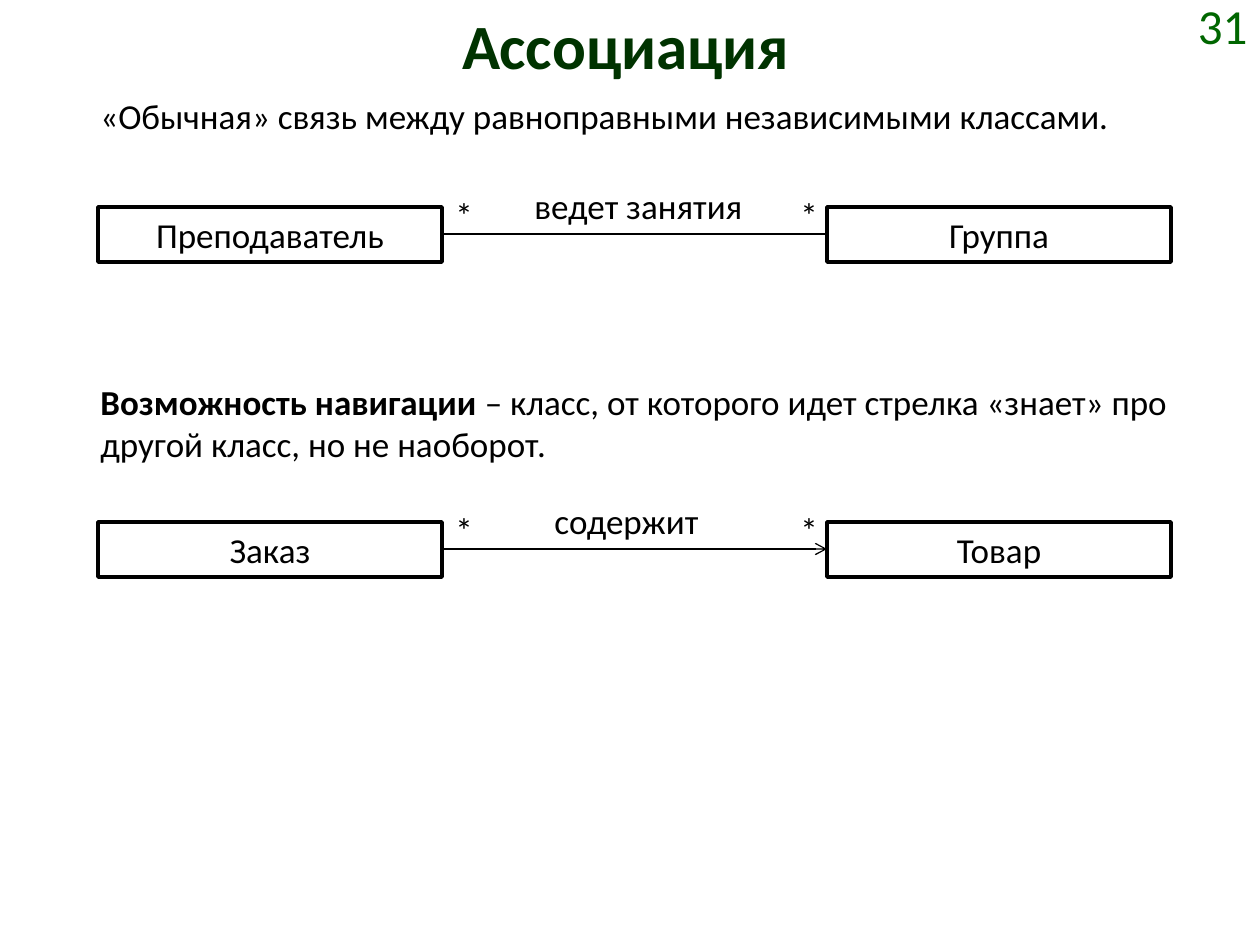
from dataclasses import dataclass
from lxml.etree import SubElement
from pptx import Presentation
from pptx.dml.color import RGBColor
from pptx.enum.shapes import MSO_CONNECTOR, MSO_SHAPE
from pptx.enum.text import MSO_ANCHOR, MSO_AUTO_SIZE, PP_ALIGN
from pptx.oxml.ns import qn
from pptx.util import Pt

SCALE = 914400 / 126


def emu(*vals):
    return [round(v * SCALE) for v in vals]


@dataclass(frozen=True)
class Theme:
    font: str = "Calibri"
    ink: RGBColor = RGBColor(0, 0, 0)
    paper: RGBColor = RGBColor(255, 255, 255)
    head: RGBColor = RGBColor(0, 51, 0)
    page: RGBColor = RGBColor(0, 102, 0)
    title: int = 36
    number: int = 28
    body: int = 20
    gap: int = 12
    frame: float = 2
    wire: float = 0.75


class Board:
    def __init__(self, slide, theme):
        self.slide = slide
        self.theme = theme

    def style(self, run, size, color, bold=False):
        font = run.font
        font.name = self.theme.font
        font.size = Pt(size)
        font.color.rgb = color
        font.bold = bold

    def title(self, text, *area):
        shape = self.slide.shapes.title
        shape.left, shape.top, shape.width, shape.height = emu(*area)
        frame = shape.text_frame
        frame.text = text
        frame.vertical_anchor = MSO_ANCHOR.TOP
        para = frame.paragraphs[0]
        para.alignment = PP_ALIGN.CENTER
        self.style(para.runs[0], self.theme.title, self.theme.head, True)

    def number(self, text, *area):
        frame = self.slide.shapes.add_textbox(*emu(*area)).text_frame
        frame.word_wrap = True
        frame.text = text
        frame.vertical_anchor = MSO_ANCHOR.MIDDLE
        para = frame.paragraphs[0]
        para.alignment = PP_ALIGN.RIGHT
        self.style(para.runs[0], self.theme.number, self.theme.page)

    def body(self, shape, text, align, wrap=True):
        frame = shape.text_frame
        frame.word_wrap = wrap
        frame.auto_size = MSO_AUTO_SIZE.SHAPE_TO_FIT_TEXT
        frame.text = text
        para = frame.paragraphs[0]
        para.alignment = align
        para.space_before = Pt(self.theme.gap)
        self.style(para.runs[0], self.theme.body, self.theme.ink)
        return para

    def label(self, text, *area, wrap=True):
        box = self.slide.shapes.add_textbox(*emu(*area))
        return self.body(box, text, PP_ALIGN.JUSTIFY, wrap)

    def term(self, word, text, *area):
        para = self.label(word, *area)
        para.alignment = PP_ALIGN.LEFT
        para.space_before = Pt(0)
        para.runs[0].font.bold = True
        run = para.add_run()
        run.text = text
        self.style(run, self.theme.body, self.theme.ink)

    def box(self, text, *area):
        shape = self.slide.shapes.add_shape(MSO_SHAPE.RECTANGLE, *emu(*area))
        shape.shadow.inherit = False
        shape.fill.solid()
        shape.fill.fore_color.rgb = self.theme.paper
        shape.line.color.rgb = self.theme.ink
        shape.line.width = Pt(self.theme.frame)
        self.body(shape, text, PP_ALIGN.CENTER)
        shape.text_frame.vertical_anchor = MSO_ANCHOR.TOP

    def link(self, *ends, arrow=False):
        wire = self.slide.shapes.add_connector(MSO_CONNECTOR.STRAIGHT, *emu(*ends))
        wire.line.color.rgb = self.theme.ink
        wire.line.width = Pt(self.theme.wire)
        props = wire._element.spPr
        if arrow:
            SubElement(props.find(qn("a:ln")), qn("a:tailEnd"), type="arrow")
        SubElement(props, qn("a:effectLst"))

    def bond(self, top, left, verb, right, start, width, arrow=False):
        near, far, wide, high, star = 98, 827, 344, 55, 39
        self.box(left, near, top, wide, high)
        self.box(right, far, top, wide, high)
        edge = near + wide + 1
        mid = top + high // 2
        self.link(edge, mid, far, mid, arrow=arrow)
        for x in (edge, far - star):
            self.label("*", x, top - 20, star, high)
        self.label(verb, start, top - 29, width, high, wrap=False)


def main():
    deck = Presentation()
    deck.slide_width, deck.slide_height = emu(1260, 945)
    slide = deck.slides.add_slide(deck.slide_layouts[5])
    board = Board(slide, Theme())
    board.title("Ассоциация", 59, 0, 1134, 118)
    board.number("31", 1131, 0, 129, 49)
    board.label("«Обычная» связь между равноправными независимыми классами.",
                88, 88, 1082, 55)
    board.bond(207, "Преподаватель", "ведет занятия", "Группа", 522, 236)
    board.bond(522, "Заказ", "содержит", "Товар", 542, 170, arrow=True)
    board.term("Возможность навигации ",
               "– класс, от которого идет стрелка «знает» про другой класс, "
               "но не наоборот.", 88, 374, 1092, 97)
    deck.save("out.pptx")


if __name__ == "__main__":
    main()
